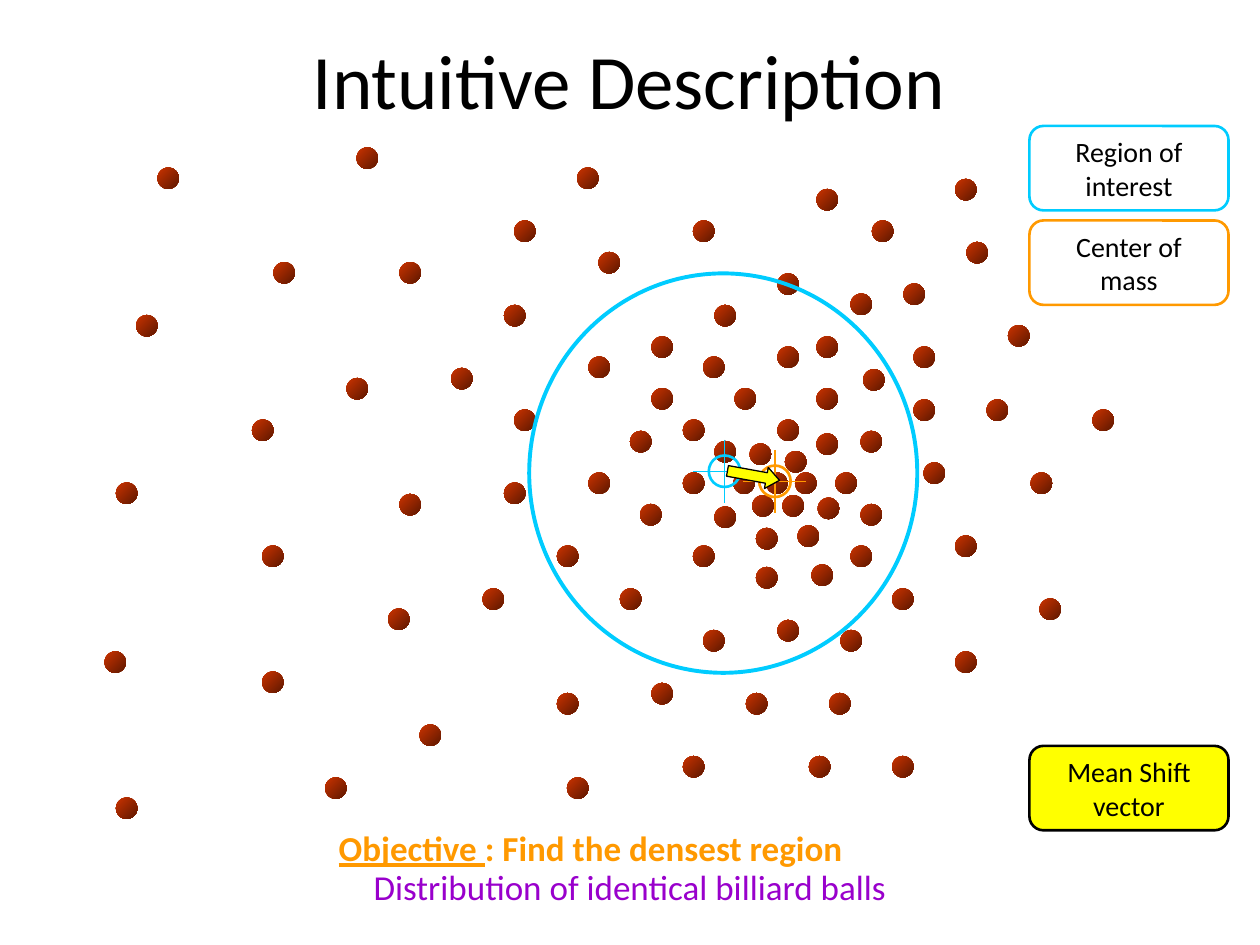
from pptx import Presentation
from pptx.dml.color import RGBColor
from pptx.enum.shapes import MSO_CONNECTOR as Connector, MSO_SHAPE as Shape
from pptx.enum.text import MSO_ANCHOR as Anchor, PP_ALIGN as Align
from pptx.oxml.ns import qn
from pptx.util import Inches, Pt
from lxml import etree

BLACK = RGBColor(0x00, 0x00, 0x00)
YELLOW = RGBColor(0xFF, 0xFF, 0x00)
CYAN = RGBColor(0x00, 0xCC, 0xFF)
ORANGE = RGBColor(0xFF, 0x99, 0x00)
PURPLE = RGBColor(0x99, 0x00, 0xCC)
BALL_LIGHT = RGBColor(0xCC, 0x33, 0x00)
BALL_DARK = RGBColor(0x5E, 0x18, 0x00)

FONT = "Calibri"
BALL_SIZE = 0.17
RING_RADIUS = 0.125
ARM_LENGTH = 0.25

BALLS = [
    (6.08, 3.75), (6.31, 3.75), (6.23, 3.58), (5.95, 3.52), (6.21, 3.93),
    (5.97, 3.93), (6.49, 3.95), (5.82, 3.75), (6.63, 3.75), (6.48, 3.44),
    (6.17, 3.33), (6.33, 4.17), (6, 4.19), (5.67, 4.02), (5.42, 3.75),
    (5.67, 3.5), (6.83, 4), (6.75, 4.33), (6.44, 4.48), (6, 4.5),
    (5.5, 4.33), (5.08, 4), (5, 3.42), (5.42, 3.33), (5.83, 3.08),
    (6.48, 3.08), (6.17, 2.75), (5.17, 3.08), (5.58, 2.83), (6.17, 2.17),
    (5.67, 2.42), (6.48, 2.67), (6.48, 1.5), (6.75, 2.33), (6.85, 2.93),
    (6.83, 3.42), (7.25, 3.17), (7.25, 2.75), (7.17, 2.25), (6.92, 1.75),
    (7.58, 1.42), (7.67, 1.92), (8, 2.58), (7.33, 3.67), (7.83, 3.17),
    (8.67, 3.25), (7.58, 4.25), (8.18, 3.75), (7.08, 4.67), (8.25, 4.75),
    (7.58, 5.17), (6.67, 5), (6.17, 4.92), (6.58, 5.5), (7.08, 6),
    (6.42, 6), (5.92, 5.5), (5.58, 5), (4.92, 4.67), (5.17, 5.42),
    (5.42, 6), (4.5, 6.17), (4.42, 5.5), (3.83, 4.67), (4.42, 4.33),
    (4.67, 3.75), (4.08, 3.25), (4.67, 2.83), (5.17, 2.67), (4.75, 2),
    (5.5, 1.75), (4.58, 1.33), (4.08, 1.75), (4, 2.42), (3.58, 2.92),
    (4, 3.83), (3.17, 3.92), (3.08, 4.83), (3.33, 5.75), (2.58, 6.17),
    (2.08, 5.33), (2.08, 4.33), (2.75, 3), (3.17, 2.08), (2.17, 2.08),
    (2, 3.33), (0.83, 5.17), (0.92, 6.33), (0.92, 3.83), (1.08, 2.5),
    (1.25, 1.33), (2.83, 1.17),
]


def set_font(paragraph, size, color):
    paragraph.font.name = FONT
    paragraph.font.size = Pt(size)
    paragraph.font.color.rgb = color


def add_outlined(shapes, preset, box, color, weight, fill=None):
    outlined = shapes.add_shape(preset, *map(Inches, box))
    outlined.shadow.inherit = False
    if fill is None:
        outlined.fill.background()
    else:
        outlined.fill.solid()
        outlined.fill.fore_color.rgb = fill
    outlined.line.color.rgb = color
    outlined.line.width = Pt(weight)
    return outlined


def add_title(slide, text):
    title = slide.shapes.title
    title.left, title.top = Inches(-0.17), Inches(0)
    title.width, title.height = Inches(10.33), Inches(1.25)
    title.text_frame.text = text
    title.text_frame.vertical_anchor = Anchor.MIDDLE
    heading = title.text_frame.paragraphs[0]
    heading.alignment = Align.CENTER
    set_font(heading, 44, BLACK)


def add_ball(shapes, left, top):
    ball = shapes.add_shape(Shape.OVAL, Inches(left), Inches(top),
                            Inches(BALL_SIZE), Inches(BALL_SIZE))
    ball.shadow.inherit = False
    ball.fill.gradient()
    ball.fill.gradient_angle = 315
    for stop, color in zip(ball.fill.gradient_stops, (BALL_LIGHT, BALL_DARK)):
        stop.color.rgb = color
    ball.line.fill.background()


def add_hair(shapes, start, end, color):
    hair = shapes.add_connector(Connector.STRAIGHT, *map(Inches, start + end))
    hair.line.color.rgb = color
    hair.line.width = Pt(0.75)
    etree.SubElement(hair._element.spPr, qn("a:effectLst"))


def add_target(shapes, x, y, color):
    ring = (x - RING_RADIUS, y - RING_RADIUS, 2 * RING_RADIUS, 2 * RING_RADIUS)
    add_outlined(shapes, Shape.OVAL, ring, color, 1.5)
    add_hair(shapes, (x, y - ARM_LENGTH), (x, y + ARM_LENGTH), color)
    add_hair(shapes, (x - ARM_LENGTH, y), (x + ARM_LENGTH, y), color)


def add_legend(shapes, top, lines, color, fill=None):
    legend = add_outlined(shapes, Shape.ROUNDED_RECTANGLE,
                          (8.17, top, 1.58, 0.67), color, 1.5, fill)
    frame = legend.text_frame
    frame.word_wrap = False
    frame.vertical_anchor = Anchor.MIDDLE
    frame.text = "\n".join(lines)
    for line in frame.paragraphs:
        line.alignment = Align.CENTER
        set_font(line, 16, BLACK)


def add_caption(shapes, box, parts, color, alignment):
    caption = shapes.add_textbox(*map(Inches, box))
    caption.text_frame.word_wrap = True
    sentence = caption.text_frame.paragraphs[0]
    sentence.alignment = alignment
    set_font(sentence, 20, color)
    for part in parts:
        sentence.add_run().text = part
    return sentence


def main():
    deck = Presentation()
    deck.slide_width, deck.slide_height = Inches(10), Inches(7.5)
    slide = deck.slides.add_slide(deck.slide_layouts[5])
    shapes = slide.shapes

    add_title(slide, "Intuitive Description")
    for left, top in BALLS:
        add_ball(shapes, left, top)
    add_caption(shapes, (0, 6.82, 10, 0.43),
                ["Distribution of identical billiard balls"], PURPLE, Align.CENTER)

    region = shapes.add_group_shape().shapes
    add_outlined(region, Shape.OVAL, (4.2, 2.17, 3.08, 3.17), CYAN, 2.25)
    add_target(region, 5.75, 3.74, CYAN)

    add_legend(shapes, 1, ["Region of", "interest"], CYAN)
    add_legend(shapes, 1.75, ["Center of", "mass"], ORANGE)
    add_legend(shapes, 5.92, ["Mean Shift", "vector"], BLACK, YELLOW)

    add_target(shapes.add_group_shape().shapes, 6.15, 3.82, ORANGE)
    mean_shift = add_outlined(shapes, Shape.RIGHT_ARROW,
                              (5.77, 3.69, 0.42, 0.17), BLACK, 0.75, YELLOW)
    mean_shift.adjustments[1] = 0.625
    mean_shift.rotation = 10.3

    objective = add_caption(shapes, (2.59, 6.51, 4.83, 0.43),
                            ["Objective ", ": Find the densest region"],
                            ORANGE, Align.LEFT)
    objective.font.bold = True
    objective.runs[0].font.underline = True

    deck.save("out.pptx")


if __name__ == "__main__":
    main()
